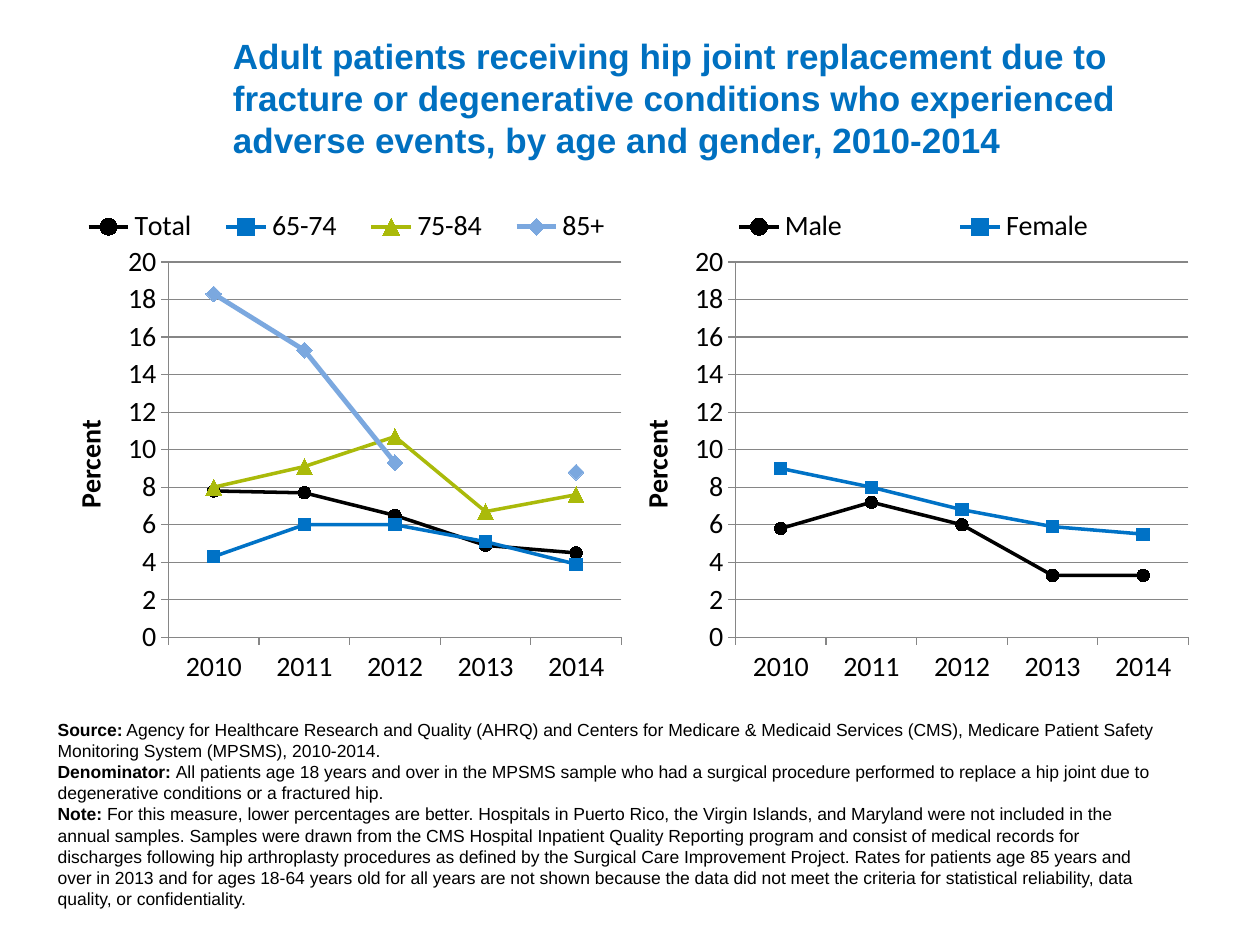
from lxml import etree
from pptx import Presentation
from pptx.chart.data import CategoryChartData
from pptx.dml.color import RGBColor
from pptx.enum.chart import XL_CHART_TYPE, XL_LEGEND_POSITION, XL_MARKER_STYLE, XL_TICK_MARK
from pptx.enum.text import MSO_ANCHOR
from pptx.oxml.ns import qn
from pptx.util import Inches, Pt

LINE_MARKERS = XL_CHART_TYPE.LINE_MARKERS
TOP = XL_LEGEND_POSITION.TOP
OUTSIDE = XL_TICK_MARK.OUTSIDE
MIDDLE = MSO_ANCHOR.MIDDLE
CIRCLE, SQUARE = XL_MARKER_STYLE.CIRCLE, XL_MARKER_STYLE.SQUARE
TRIANGLE, DIAMOND = XL_MARKER_STYLE.TRIANGLE, XL_MARKER_STYLE.DIAMOND

WIDTH, HEIGHT = 10, 7.5
CHART_LEFT, CHART_TOP, CHART_W, CHART_H = 0.5, 1.6, 4.5, 4
BLACK, BLUE, GREEN, LIGHT_BLUE, GREY = "000000", "0072C6", "AABA0A", "7BA8DF", "868686"
YEARS = ["2010", "2011", "2012", "2013", "2014"]
# marker, marker size, colour, line width
STYLES = [(CIRCLE, 7, BLACK, 2), (SQUARE, 7, BLUE, 2),
          (TRIANGLE, 9, GREEN, 2), (DIAMOND, 9, LIGHT_BLUE, 2.75)]
AGE = {"Total": [7.8, 7.7, 6.5, 4.9, 4.5],
       "65-74": [4.3, 6, 6, 5.1, 3.9],
       "75-84": [8, 9.1, 10.7, 6.7, 7.6],
       "85+": [18.3, 15.3, 9.3, None, 8.8]}
GENDER = {"Male": [5.8, 7.2, 6, 3.3, 3.3],
          "Female": [9, 8, 6.8, 5.9, 5.5]}
TITLE = ("Adult patients receiving hip joint replacement due to fracture or degenerative "
         "conditions who experienced adverse events, by age and gender, 2010-2014")
NOTES = [
    ("Source:", " Agency for Healthcare Research and Quality (AHRQ) and Centers for Medicare & "
     "Medicaid Services (CMS), Medicare Patient Safety Monitoring System (MPSMS), 2010-2014."),
    ("Denominator: ", "All patients age 18 years and over in the MPSMS sample who had a surgical "
     "procedure performed to replace a hip joint due to degenerative conditions or a fractured "
     "hip."),
    ("Note: ", "For this measure, lower percentages are better. Hospitals in Puerto Rico, the "
     "Virgin Islands, and Maryland were not included in the annual samples. Samples were drawn "
     "from the CMS Hospital Inpatient Quality Reporting program and consist of medical records "
     "for discharges following hip arthroplasty procedures as defined by the Surgical Care "
     "Improvement Project. Rates for patients age 85 years and over in 2013 and for ages 18-64 "
     "years old for all years are not shown because the data did not meet the criteria for "
     "statistical reliability, data quality, or confidentiality."),
]


def rgb(value):
    return RGBColor.from_string(value)


def set_font(font, name, size, color=BLACK, bold=False):
    for key, value in {"name": name, "size": Pt(size), "bold": bold}.items():
        setattr(font, key, value)
    font.color.rgb = rgb(color)


def add_text(s, box, paragraphs, size, color=BLACK, anchor=None):
    """Each paragraph is a pair: a bold lead and the plain text after it."""
    tf = s.shapes.add_textbox(*map(Inches, box)).text_frame
    tf.word_wrap = True
    tf.vertical_anchor = anchor
    for i, (lead, body) in enumerate(paragraphs):
        p = tf.paragraphs[0] if i == 0 else tf.add_paragraph()
        for text, bold in ((lead, True), (body, False)):
            if text:
                r = p.add_run()
                r.text = text
                set_font(r.font, "Arial", size, color, bold)


def set_layout(parent, before, target, x, y, w, h):
    """Place a chart part by shares of the chart's size."""
    for old in parent.findall(qn("c:layout")):
        parent.remove(old)
    layout = etree.Element(qn("c:layout"))
    manual = etree.SubElement(layout, qn("c:manualLayout"))
    values = {"layoutTarget": target, "xMode": "edge", "yMode": "edge",
              "x": x, "y": y, "w": w, "h": h}
    for tag, value in values.items():
        if value is not None:
            etree.SubElement(manual, qn("c:" + tag)).set("val", str(value))
    if before is None:
        parent.insert(0, layout)
    else:
        before.addnext(layout)


def format_axes(chart):
    value = chart.value_axis
    limits = {"minimum_scale": 0, "maximum_scale": 20, "major_unit": 2,
              "has_major_gridlines": True}
    for key, setting in limits.items():
        setattr(value, key, setting)
    for axis in (chart.category_axis, value):
        axis.major_tick_mark = OUTSIDE
        set_font(axis.tick_labels.font, "Calibri", 16)
        axis.format.line.color.rgb = rgb(GREY)
    value.major_gridlines.format.line.color.rgb = rgb(GREY)
    value.tick_labels.number_format = "0"
    value.tick_labels.number_format_is_linked = False
    p = value.axis_title.text_frame.paragraphs[0]
    r = p.add_run()
    r.text = "Percent"
    set_font(r.font, "Calibri", 16, bold=True)


def add_line_chart(s, box, series):
    data = CategoryChartData()
    data.categories = YEARS
    for name, values in series.items():
        data.add_series(name, values)
    chart = s.shapes.add_chart(LINE_MARKERS, *map(Inches, box), data).chart
    set_font(chart.font, "Arial", 10)
    chart.has_title = False
    format_axes(chart)

    chart.has_legend = True
    legend = chart.legend
    legend.position = TOP
    legend.include_in_layout = False
    set_font(legend.font, "Calibri", 16)
    element = legend._element
    set_layout(element, element.find(qn("c:legendPos")), None, 0, 0.01, 1, 0.08)
    plot_area = chart._chartSpace.chart.plotArea
    set_layout(plot_area, None, "inner", 0.186, 0.12, 0.799, 0.745)

    plot = chart.plots[0]
    plot.vary_by_categories = False
    for line, (style, size, color, width) in zip(plot.series, STYLES):
        line.smooth = False
        line.format.line.width = Pt(width)
        line.format.line.color.rgb = rgb(color)
        line.marker.style = style
        line.marker.size = size
        line.marker.format.fill.solid()
        line.marker.format.fill.fore_color.rgb = rgb(color)
        line.marker.format.line.color.rgb = rgb(color)


def main():
    prs = Presentation()
    prs.slide_width, prs.slide_height = Inches(WIDTH), Inches(HEIGHT)
    s = prs.slides.add_slide(prs.slide_layouts[6])
    add_text(s, (1.75, 0.3, 7.75, 0.95), [(TITLE, "")], 20, "0070C0", MIDDLE)
    for column, series in enumerate((AGE, GENDER)):
        left = CHART_LEFT + column * CHART_W
        add_line_chart(s, (left, CHART_TOP, CHART_W, CHART_H), series)
    add_text(s, (0.36, 5.66, 9, 1.62), NOTES, 10)
    prs.save("out.pptx")


if __name__ == "__main__":
    main()
